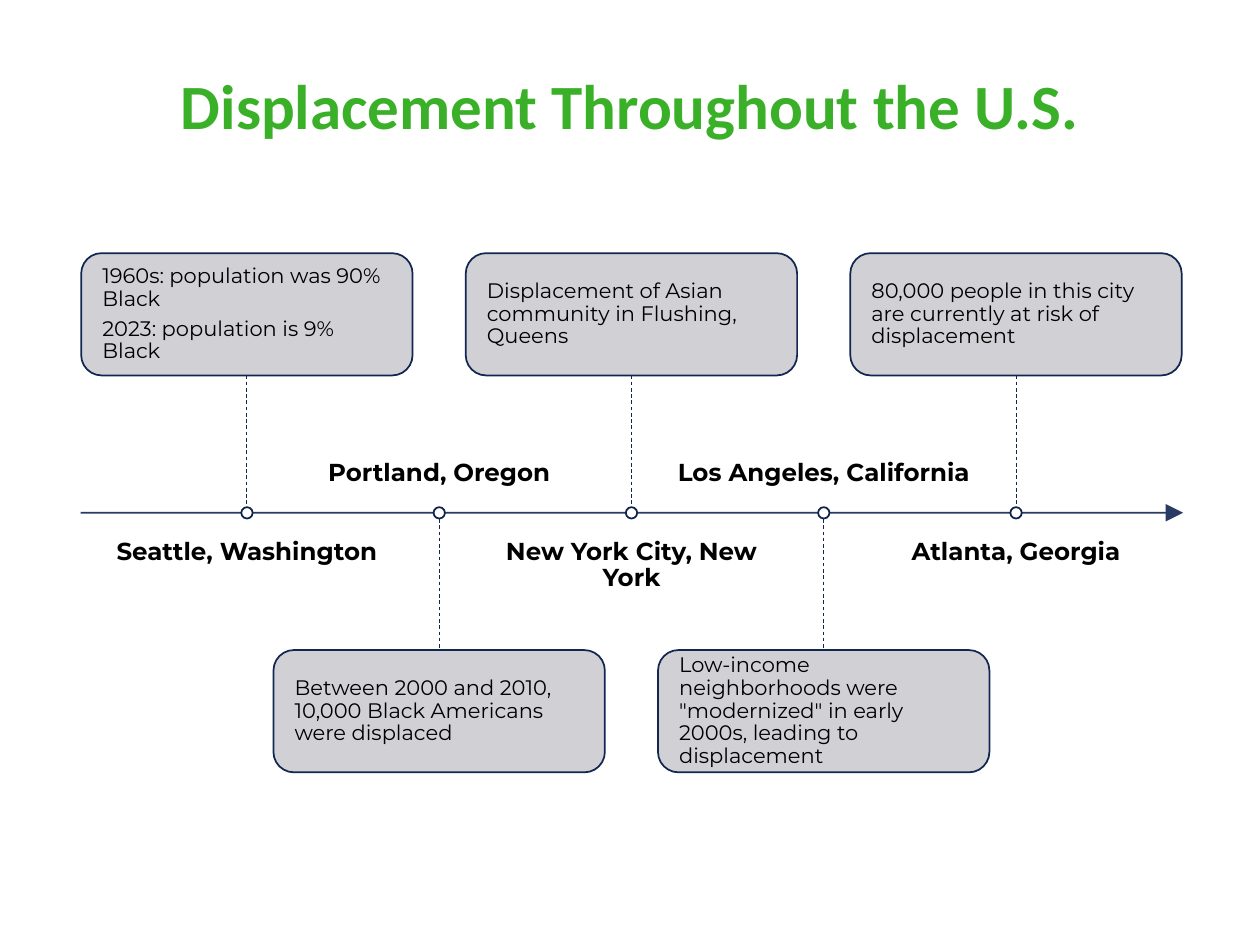
"""Build a timeline slide about displacement in five U.S. cities."""
from typing import NamedTuple

from lxml.etree import SubElement
from pptx import Presentation
from pptx.dml.color import RGBColor
from pptx.enum.dml import MSO_LINE
from pptx.enum.shapes import MSO_CONNECTOR, MSO_SHAPE
from pptx.enum.text import MSO_ANCHOR as Anchor, PP_ALIGN as Align
from pptx.oxml.ns import qn
from pptx.util import Inches, Pt

COLORS = {
    "title": "3AB028", "navy": "122652", "ring": "10224A",
    "card": "CCCDD1", "white": "FFFFFF", "text": "000000",
}
AXIS_LEFT, AXIS_RIGHT, AXIS_Y = 0.64, 9.39, 4.07
FIRST_X, STEP = 1.96, 1.526
CARD_WIDTH, CARD_HEIGHT = 2.63, 0.97
UPPER_CARD_TOP, LOWER_CARD_TOP = 2.01, 5.16
LABEL_WIDTH, LABEL_HEIGHT, LABEL_GAP = 2.32, 0.65, 0.21
DOT_SIZE = 0.09


class City(NamedTuple):
    name: str
    facts: str


CITIES = [
    City("Seattle, Washington",
         "1960s: population was 90% Black\n2023: population is 9% Black"),
    City("Portland, Oregon",
         "Between 2000 and 2010, 10,000 Black Americans were displaced"),
    City("New York City, New York",
         "Displacement of Asian community in Flushing, Queens"),
    City("Los Angeles, California",
         'Low-income neighborhoods were "modernized" in early 2000s, leading to displacement'),
    City("Atlanta, Georgia",
         "80,000 people in this city are currently at risk of displacement"),
]


def rgb(name: str) -> RGBColor:
    return RGBColor.from_string(COLORS[name])


def set_opacity(fill_parent, percent: int) -> None:
    color = fill_parent.find(qn("a:solidFill"))[0]
    SubElement(color, qn("a:alpha")).set("val", str(percent * 1000))


def write(frame, text: str, size: int, align, anchor, inset: float = 0,
          bold: bool = False, color: str = "text", font: str = "Montserrat") -> None:
    frame.text = text
    frame.word_wrap = True
    frame.vertical_anchor = anchor
    frame.margin_left = frame.margin_right = Inches(inset)
    frame.margin_top = frame.margin_bottom = Inches(inset)
    for para in frame.paragraphs:
        para.alignment = align
        para.line_spacing = 0.9
        para.space_after = Pt(size * 0.35)
        for span in para.runs:
            span.font.name = font
            span.font.size = Pt(size)
            span.font.bold = bold
            span.font.color.rgb = rgb(color)


def add_line(slide, start: tuple, end: tuple, width: float):
    line = slide.shapes.add_connector(
        MSO_CONNECTOR.STRAIGHT, *(Inches(value) for value in start + end))
    line.line.color.rgb = rgb("navy")
    line.line.width = Pt(width)
    return line


def clear_shadow(line) -> None:
    SubElement(line._element.spPr, qn("a:effectLst"))


def add_axis(slide) -> None:
    axis = add_line(slide, (AXIS_LEFT, AXIS_Y), (AXIS_RIGHT, AXIS_Y), 1)
    outline = axis.line._get_or_add_ln()
    set_opacity(outline, 90)
    SubElement(outline, qn("a:tailEnd"), type="triangle", w="lg", len="lg")
    clear_shadow(axis)


def add_stem(slide, x: float, top: float, bottom: float) -> None:
    stem = add_line(slide, (x, top), (x, bottom), 0.5)
    stem.line.dash_style = MSO_LINE.DASH
    clear_shadow(stem)


def add_shape(slide, kind, x: float, top: float, width: float, height: float,
              fill: str, outline: str):
    shape = slide.shapes.add_shape(
        kind, Inches(x - width / 2), Inches(top), Inches(width), Inches(height))
    shape.shadow.inherit = False
    shape.fill.solid()
    shape.fill.fore_color.rgb = rgb(fill)
    shape.line.color.rgb = rgb(outline)
    shape.line.width = Pt(1)
    return shape


def add_city(slide, city: City, x: float, card_above: bool) -> None:
    if card_above:
        card_top, label_top, anchor = UPPER_CARD_TOP, AXIS_Y + LABEL_GAP, Anchor.TOP
        add_stem(slide, x, card_top + CARD_HEIGHT, AXIS_Y)
    else:
        card_top, anchor = LOWER_CARD_TOP, Anchor.BOTTOM
        label_top = AXIS_Y - LABEL_GAP - LABEL_HEIGHT
        add_stem(slide, x, AXIS_Y, card_top)
    card = add_shape(slide, MSO_SHAPE.ROUNDED_RECTANGLE, x, card_top,
                     CARD_WIDTH, CARD_HEIGHT, "card", "navy")
    set_opacity(card._element.spPr, 90)
    write(card.text_frame, city.facts, 12, Align.LEFT, Anchor.MIDDLE, inset=0.12)
    label = slide.shapes.add_textbox(
        Inches(x - LABEL_WIDTH / 2), Inches(label_top),
        Inches(LABEL_WIDTH), Inches(LABEL_HEIGHT))
    write(label.text_frame, city.name, 14, Align.CENTER, anchor, bold=True)
    add_shape(slide, MSO_SHAPE.OVAL, x, AXIS_Y - DOT_SIZE / 2,
              DOT_SIZE, DOT_SIZE, "white", "ring")


def main() -> None:
    deck = Presentation()
    deck.slide_width, deck.slide_height = Inches(10), Inches(7.5)
    slide = deck.slides.add_slide(deck.slide_layouts[5])
    title = slide.shapes.title
    title.left, title.top = Inches(0.69), Inches(0.14)
    title.width, title.height = Inches(8.62), Inches(1.45)
    write(title.text_frame, "Displacement Throughout the U.S.", 36, Align.CENTER,
          Anchor.MIDDLE, inset=0.05, bold=True, color="title", font="Calibri")
    add_axis(slide)
    for index, city in enumerate(CITIES):
        add_city(slide, city, FIRST_X + index * STEP, index % 2 == 0)
    deck.save("out.pptx")


if __name__ == "__main__":
    main()
